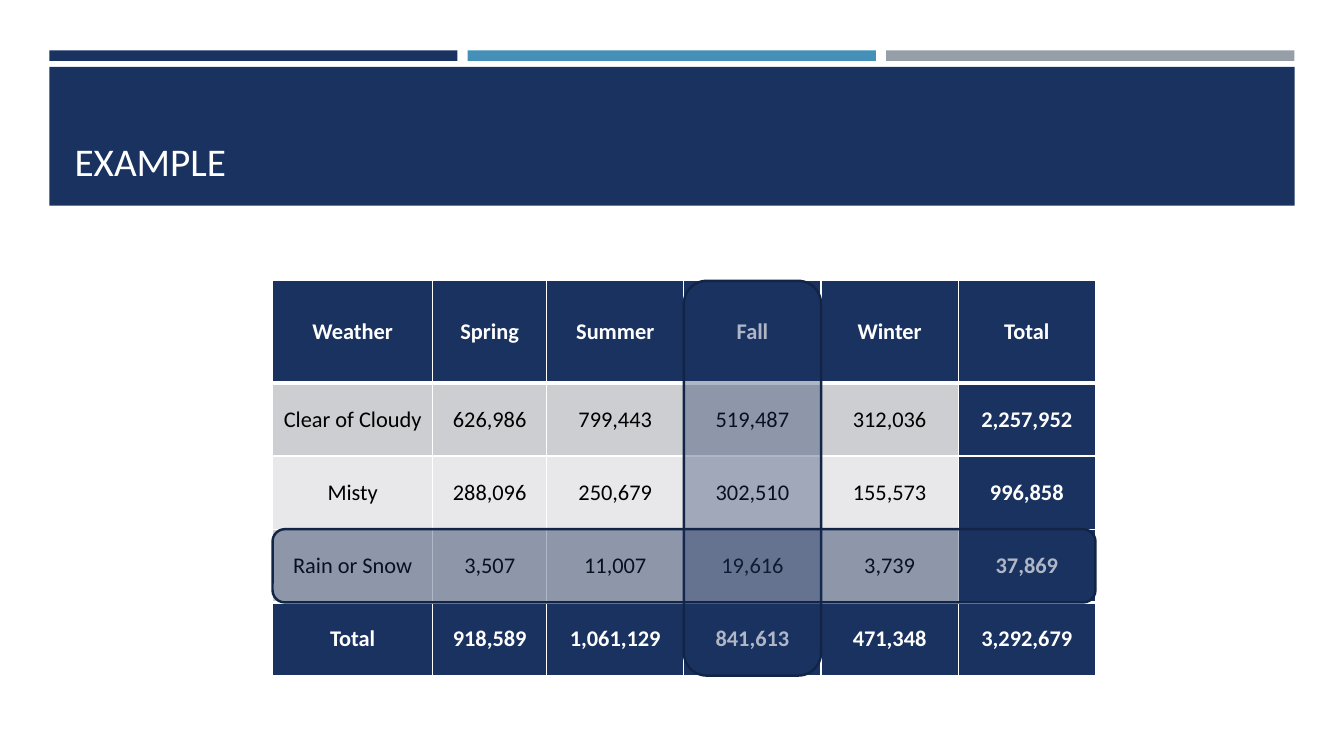
from lxml import etree
from pptx import Presentation
from pptx import util as u
from pptx.dml.color import RGBColor
from pptx.enum import shapes, text
from pptx.oxml import ns

INK = {"navy": "1A3260", "blue": "4590B8", "gray": "969FA7", "edge": "132547",
       "dark": "CDCED2", "pale": "E8E8EA", "white": "FFFFFF", "black": "000000"}


class Deck:
    def __init__(self, font):
        self.font = font
        self.prs = Presentation()
        self.prs.slide_width, self.prs.slide_height = u.Pt(960), u.Pt(540)
        self.slide = self.prs.slides.add_slide(self.prs.slide_layouts[5])

    def rgb(self, name):
        return RGBColor.from_string(INK[name])

    def paint(self, item, name):
        item.fill.solid()
        item.fill.fore_color.rgb = self.rgb(name)

    def label(self, para, words, size, color, bold=False):
        run = para.add_run()
        run.text = words
        run.font.name, run.font.size, run.font.bold = self.font, u.Pt(size), bold
        run.font.color.rgb = self.rgb(color)

    def title(self, words, box):
        head = self.slide.shapes.title
        head.left, head.top, head.width, head.height = map(u.Pt, box)
        frame = head.text_frame
        frame.word_wrap = True
        frame.vertical_anchor = text.MSO_ANCHOR.BOTTOM
        para = frame.paragraphs[0]
        para.alignment = text.PP_ALIGN.LEFT
        self.label(para, words, 28, "white")

    def block(self, box, color, kind=shapes.MSO_SHAPE.RECTANGLE):
        shape = self.slide.shapes.add_shape(kind, *map(u.Pt, box))
        shape.shadow.inherit = False
        self.paint(shape, color)
        shape.line.fill.background()
        return shape

    def band(self, box):
        """Add a see-through rounded highlight."""
        shape = self.block(box, "navy", shapes.MSO_SHAPE.ROUNDED_RECTANGLE)
        shape.line.color.rgb = self.rgb("edge")
        shape.line.width = u.Pt(1.75)
        tint = shape._element.spPr.find(ns.qn("a:solidFill"))[0]
        etree.SubElement(tint, ns.qn("a:alpha"), val="35000")

    def border(self, cell, sides):
        props = cell._tc.get_or_add_tcPr()
        for spot, (side, width) in enumerate(sides.items()):
            line = etree.Element(ns.qn("a:" + side), w=str(u.Pt(width)))
            fill = etree.SubElement(line, ns.qn("a:solidFill"))
            etree.SubElement(fill, ns.qn("a:srgbClr"), val=INK["white"])
            props.insert(spot, line)

    def table(self, rows, left, top, wide, high):
        last, end = len(rows) - 1, len(wide) - 1
        grid = self.slide.shapes.add_table(
            len(rows), len(wide), *map(u.Pt, (left, top, sum(wide), sum(high)))).table
        grid.first_row = grid.horz_banding = False
        for col, width in zip(grid.columns, wide):
            col.width = u.Pt(width)
        for r, row in enumerate(rows):
            grid.rows[r].height = u.Pt(high[r])
            for c, words in enumerate(row):
                cell = grid.cell(r, c)
                bold = r in (0, last) or c == end
                self.paint(cell, "navy" if bold else "dark" if r % 2 else "pale")
                cell.vertical_anchor = text.MSO_ANCHOR.MIDDLE
                cell.margin_left = cell.margin_right = u.Pt(5)
                para = cell.text_frame.paragraphs[0]
                para.alignment = text.PP_ALIGN.CENTER
                self.label(para, words, 16, "white" if bold else "black", bold)
                self.border(cell, {"lnL": 1, "lnR": 1,
                                   "lnT": 3 if r in (1, last) else 1,
                                   "lnB": 3 if r in (0, last - 1) else 1})


ROWS = [
    ("Weather", "Spring", "Summer", "Fall", "Winter", "Total"),
    ("Clear of Cloudy", "626,986", "799,443", "519,487", "312,036", "2,257,952"),
    ("Misty", "288,096", "250,679", "302,510", "155,573", "996,858"),
    ("Rain or Snow", "3,507", "11,007", "19,616", "3,739", "37,869"),
    ("Total", "918,589", "1,061,129", "841,613", "471,348", "3,292,679"),
]


def main():
    deck = Deck("Calibri")

    # Top stripes and title banner
    for i, color in enumerate(("navy", "blue", "gray")):
        deck.block((35.2 + i * 298.9, 36, 291.6, 7.5), color)
    banner = deck.block((35.2, 47.8, 889.6, 99.2), "navy")

    # Title, brought in front of the banner
    deck.title("EXAMPLE", (46.1, 57.6, 868.3, 77.8))
    banner._element.addnext(deck.slide.shapes.title._element)

    # Weather by season table
    left, top = 194.7, 200.6
    wide = [114.4, 81.4] + [98] * 4
    high = [72.8] + [52.3] * 4
    deck.table(ROWS, left, top, wide, high)

    # Highlights: the Fall column, then the Rain or Snow row
    deck.band((left + sum(wide[:3]), top, wide[3], sum(high)))
    deck.band((left, top + sum(high[:3]), sum(wide), high[3]))

    deck.prs.save("out.pptx")


if __name__ == "__main__":
    main()
